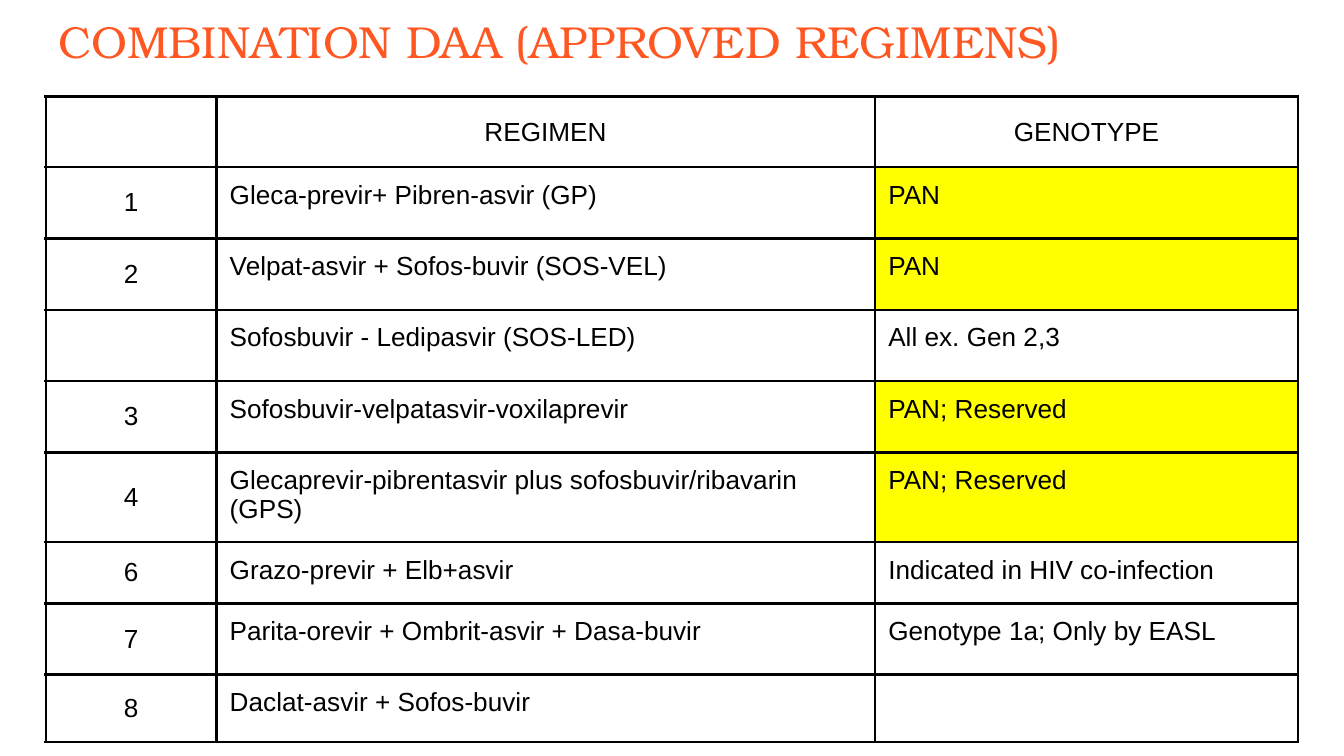
from dataclasses import dataclass

from lxml import etree
from pptx import Presentation
from pptx.dml.color import RGBColor
from pptx.enum.text import MSO_ANCHOR, PP_ALIGN
from pptx.oxml.ns import qn
from pptx.util import Pt

LEFT, CENTER = PP_ALIGN.LEFT, PP_ALIGN.CENTER
TOP, MIDDLE = MSO_ANCHOR.TOP, MSO_ANCHOR.MIDDLE


@dataclass(frozen=True)
class Theme:
    title_color: str = "FF5722"
    ink: str = "000000"
    paper: str = "FFFFFF"
    highlight: str = "FFFF00"
    title_font: str = "TeX Gyre Bonum"
    body_font: str = "Arial"
    title_size: float = 24
    body_size: float = 14
    inset: float = 7.2
    border: float = 1.5


@dataclass(frozen=True)
class Regimen:
    number: str
    name: str
    genotype: str
    height: float = 38.2
    highlighted: bool = False


THEME = Theme()
MARGIN_LEFT = 24.5
TABLE_TOP = 51.8
HEADER_HEIGHT = 37.8
COLUMN_WIDTHS = (91.4, 352.8, 226.8)
HEADINGS = ("", "REGIMEN", "GENOTYPE")
REGIMENS = (
    Regimen("1", "Gleca-previr+ Pibren-asvir (GP)", "PAN", highlighted=True),
    Regimen("2", "Velpat-asvir + Sofos-buvir (SOS-VEL)", "PAN", highlighted=True),
    Regimen("", "Sofosbuvir - Ledipasvir (SOS-LED)", "All ex. Gen 2,3"),
    Regimen("3", "Sofosbuvir-velpatasvir-voxilaprevir", "PAN; Reserved", highlighted=True),
    Regimen("4", "Glecaprevir-pibrentasvir plus sofosbuvir/ribavarin (GPS)",
            "PAN; Reserved", height=45.7, highlighted=True),
    Regimen("6", "Grazo-previr + Elb+asvir", "Indicated in HIV co-infection", height=32.9),
    Regimen("7", "Parita-orevir + Ombrit-asvir + Dasa-buvir", "Genotype 1a; Only by EASL"),
    Regimen("8", "Daclat-asvir + Sofos-buvir", "", height=33.1),
)


def write(frame, text: str, *, font: str = THEME.body_font, size: float = THEME.body_size,
          color: str = THEME.ink, align=LEFT) -> None:
    paragraph = frame.paragraphs[0]
    paragraph.alignment = align
    if not text:
        return
    run = paragraph.add_run()
    run.text = text
    run.font.name = font
    run.font.size = Pt(size)
    run.font.color.rgb = RGBColor.from_string(color)


def set_insets(holder) -> None:
    holder.margin_left = holder.margin_right = Pt(THEME.inset)
    holder.margin_top = holder.margin_bottom = Pt(THEME.inset)


def add_borders(cell) -> None:
    properties = cell._tc.get_or_add_tcPr()
    # Border lines must come before the fill
    for position, side in enumerate(("lnL", "lnR", "lnT", "lnB")):
        line = etree.Element(qn(f"a:{side}"), w=str(Pt(THEME.border)))
        solid = etree.SubElement(line, qn("a:solidFill"))
        etree.SubElement(solid, qn("a:srgbClr"), val=THEME.ink)
        properties.insert(position, line)


def fill_cell(cell, text: str, *, centered: bool, background: str = THEME.paper) -> None:
    set_insets(cell)
    cell.vertical_anchor = MIDDLE if centered else TOP
    cell.fill.solid()
    cell.fill.fore_color.rgb = RGBColor.from_string(background)
    add_borders(cell)
    write(cell.text_frame, text, align=CENTER if centered else LEFT)


def add_title(slide, text: str) -> None:
    title = slide.shapes.add_textbox(Pt(MARGIN_LEFT), Pt(0), Pt(sum(COLUMN_WIDTHS)), Pt(51.8))
    title.text_frame.word_wrap = True
    set_insets(title.text_frame)
    write(title.text_frame, text, font=THEME.title_font, size=THEME.title_size,
          color=THEME.title_color)


def add_regimen_table(slide) -> None:
    heights = [HEADER_HEIGHT] + [regimen.height for regimen in REGIMENS]
    table = slide.shapes.add_table(
        len(heights), len(COLUMN_WIDTHS), Pt(MARGIN_LEFT), Pt(TABLE_TOP),
        Pt(sum(COLUMN_WIDTHS)), Pt(sum(heights))).table
    for column, width in zip(table.columns, COLUMN_WIDTHS):
        column.width = Pt(width)
    for row, height in zip(table.rows, heights):
        row.height = Pt(height)
    table.first_row = table.horz_banding = False

    # Header row
    for column, heading in enumerate(HEADINGS):
        fill_cell(table.cell(0, column), heading, centered=True)

    # One row per regimen
    for row, regimen in enumerate(REGIMENS, start=1):
        fill_cell(table.cell(row, 0), regimen.number, centered=True)
        fill_cell(table.cell(row, 1), regimen.name, centered=False)
        fill_cell(table.cell(row, 2), regimen.genotype, centered=False,
                  background=THEME.highlight if regimen.highlighted else THEME.paper)


def main() -> None:
    deck = Presentation()
    deck.slide_width, deck.slide_height = Pt(720), Pt(405)
    slide = deck.slides.add_slide(deck.slide_layouts[6])
    add_title(slide, "COMBINATION DAA (APPROVED REGIMENS)")
    add_regimen_table(slide)
    deck.save("out.pptx")


if __name__ == "__main__":
    main()
